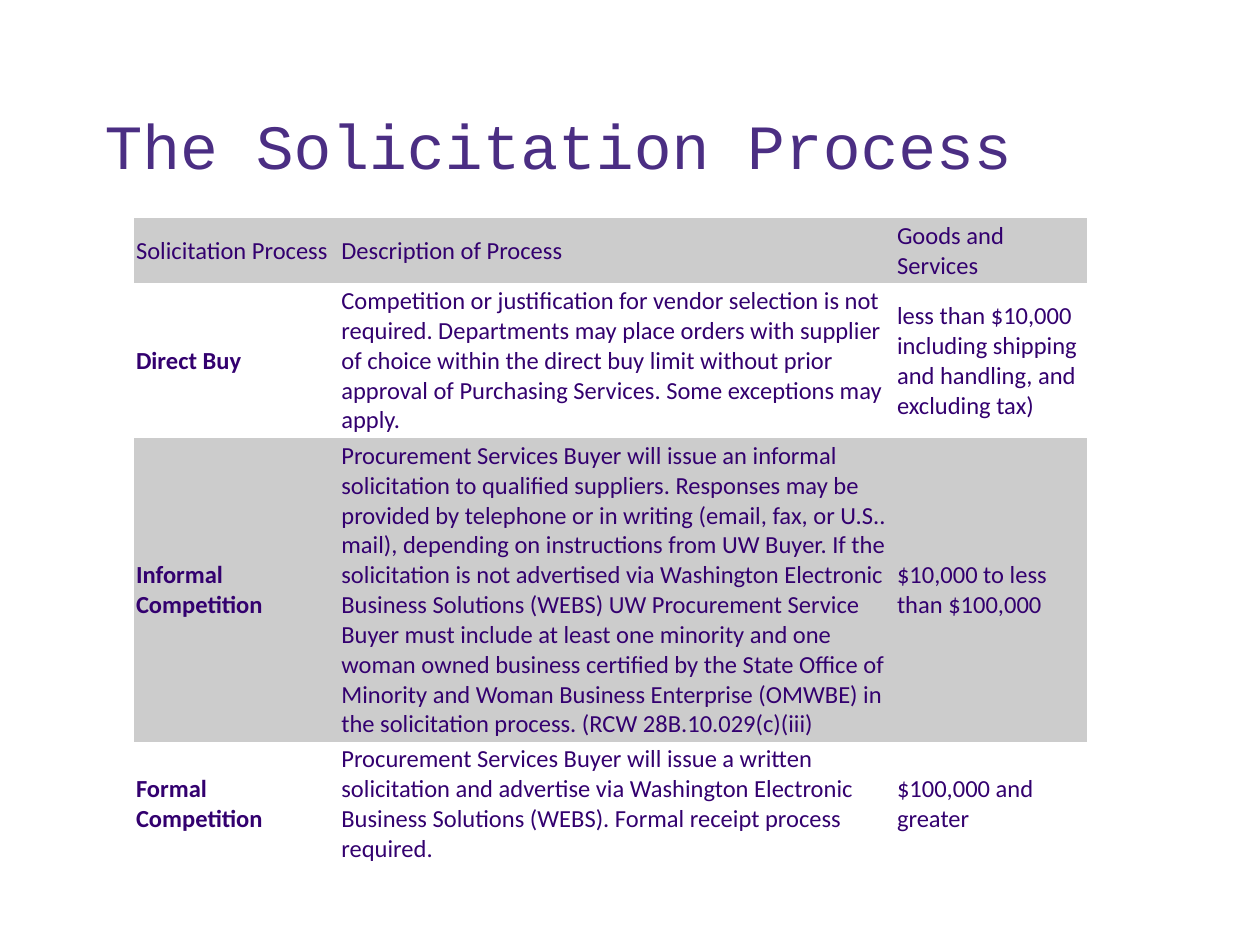
from typing import NamedTuple

from pptx import Presentation
from pptx.dml.color import RGBColor
from pptx.enum.text import MSO_ANCHOR as Anchor, MSO_AUTO_SIZE as AutoSize, PP_ALIGN as Align
from pptx.oxml.ns import qn
from pptx.util import Inches, Pt

TITLE_COLOR, TEXT_COLOR, BAND_COLOR = "4B2E83", "33006F", "CCCCCC"
NO_STYLE = "{2D5ABB26-0587-4C30-8999-92F81FD0307C}"
COLUMN_WIDTHS = (1.63, 4.41, 1.53)
CELL_MARGIN = 0.02


class ProcessRow(NamedTuple):
    height: float
    process: str
    description: str
    goods: str


ROWS = (
    ProcessRow(0.52, "Solicitation Process", "Description of Process", "Goods and  Services"),
    ProcessRow(
        1.23,
        "Direct Buy",
        "Competition or justification for vendor selection is not required. "
        "Departments may place orders with supplier of choice within the direct buy "
        "limit without prior approval of Purchasing Services. Some exceptions may apply.",
        "less than $10,000 including shipping and handling, and excluding tax)",
    ),
    ProcessRow(
        2.41,
        "Informal Competition",
        "Procurement Services Buyer will issue an informal solicitation to qualified "
        "suppliers. Responses may be provided by telephone or in writing (email, fax, "
        "or U.S.. mail), depending on instructions from UW Buyer. If the "
        "solicitation is not advertised via Washington Electronic Business Solutions "
        "(WEBS) UW Procurement Service Buyer must include at least one minority and one "
        "woman owned business certified by the State Office of Minority and Woman "
        "Business Enterprise (OMWBE) in the solicitation process. (RCW 28B.10.029(c)(iii)",
        "$10,000 to less than $100,000",
    ),
    ProcessRow(
        0.98,
        "Formal Competition",
        "Procurement Services Buyer will issue a written solicitation and advertise "
        "via Washington Electronic Business Solutions (WEBS). Formal receipt process "
        "required.",
        "$100,000 and greater",
    ),
)


def style_font(font, name: str, size: float, color: str, bold: bool = False) -> None:
    font.name, font.size, font.bold = name, Pt(size), bold
    font.color.rgb = RGBColor.from_string(color)


def add_title(page, text: str) -> None:
    title = page.shapes.title
    title.left, title.top = Inches(0.73), Inches(0.68)
    title.width, title.height = Inches(8.95), Inches(0.82)
    frame = title.text_frame
    frame.text = text
    frame.word_wrap = True
    frame.auto_size = AutoSize.NONE
    frame.vertical_anchor = Anchor.BOTTOM
    para = frame.paragraphs[0]
    para.alignment, para.line_spacing = Align.LEFT, 0.9
    style_font(para.runs[0].font, "Courier New", 36, TITLE_COLOR)


def fill_cell(cell, text: str, banded: bool, bold: bool) -> None:
    cell.text_frame.text = text
    cell.vertical_anchor = Anchor.MIDDLE
    cell.margin_left = cell.margin_right = Inches(CELL_MARGIN)
    cell.margin_top = cell.margin_bottom = Inches(CELL_MARGIN)
    if banded:
        cell.fill.solid()
        cell.fill.fore_color.rgb = RGBColor.from_string(BAND_COLOR)
    else:
        cell.fill.background()
    style_font(cell.text_frame.paragraphs[0].runs[0].font, "Calibri", 14, TEXT_COLOR, bold)


def add_process_table(page) -> None:
    frame = page.shapes.add_table(
        len(ROWS), len(COLUMN_WIDTHS), Inches(1.06), Inches(1.73),
        Inches(sum(COLUMN_WIDTHS)), Inches(sum(row.height for row in ROWS)),
    )
    table = frame.table
    table.first_row = table.horz_banding = False
    # A plain table style has no borders between the cells
    frame._element.find(".//" + qn("a:tableStyleId")).text = NO_STYLE

    for column, width in zip(table.columns, COLUMN_WIDTHS):
        column.width = Inches(width)
    for row_index, row in enumerate(ROWS):
        table.rows[row_index].height = Inches(row.height)
        for col_index, text in enumerate((row.process, row.description, row.goods)):
            fill_cell(
                table.cell(row_index, col_index), text,
                banded=row_index % 2 == 0,
                bold=row_index > 0 and col_index == 0,
            )


def main() -> None:
    deck = Presentation()
    deck.slide_width, deck.slide_height = Inches(10), Inches(7.5)
    page = deck.slides.add_slide(deck.slide_layouts[5])  # Title Only
    add_title(page, "The Solicitation Process")
    add_process_table(page)
    deck.save("out.pptx")


if __name__ == "__main__":
    main()
